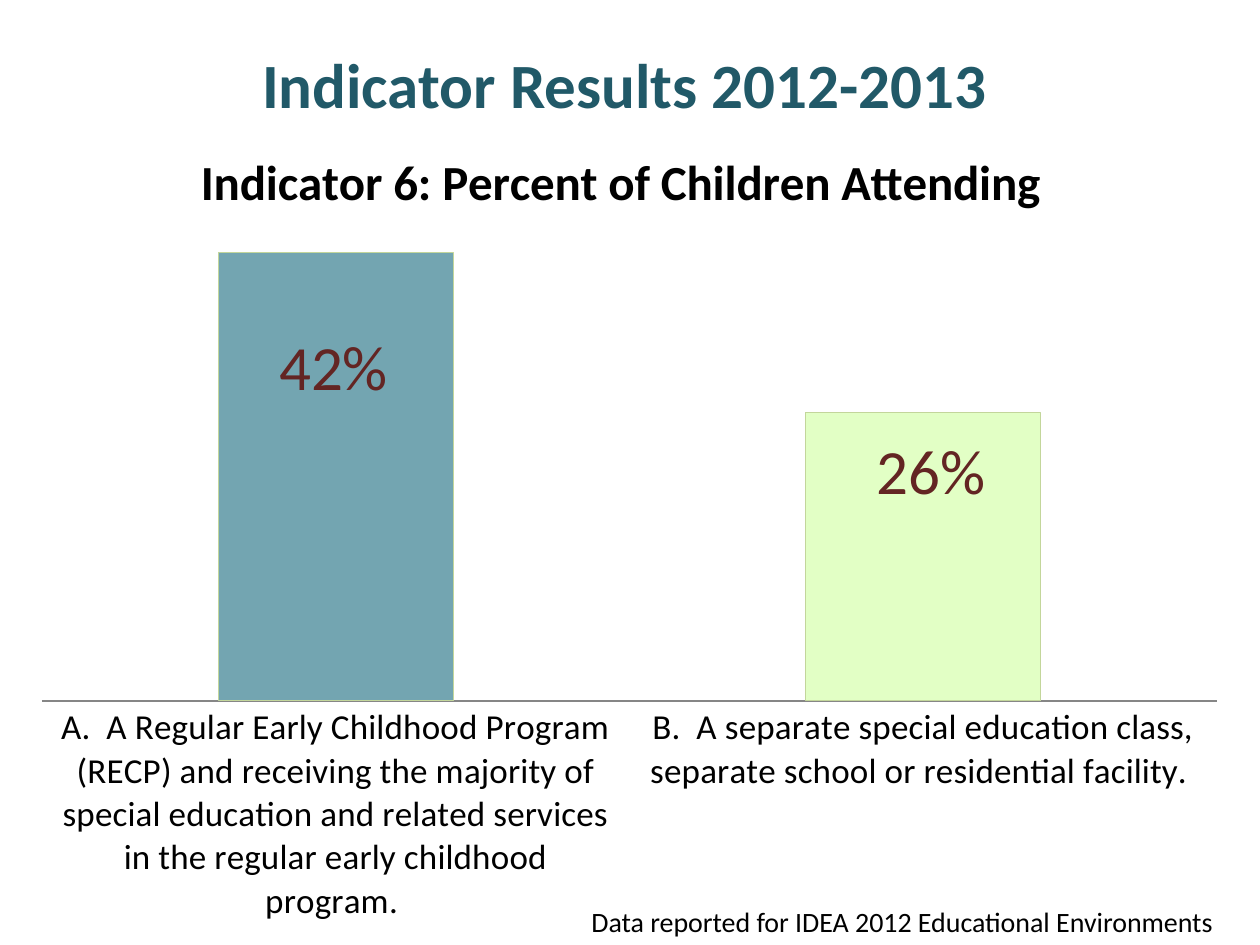
from dataclasses import dataclass

from lxml.etree import SubElement
from pptx import Presentation
from pptx.chart.data import CategoryChartData
from pptx.dml.color import RGBColor
from pptx.enum.chart import XL_CHART_TYPE as ChartType, XL_LABEL_POSITION as LabelPos
from pptx.enum.chart import XL_TICK_LABEL_POSITION as TickLabels, XL_TICK_MARK as Tick
from pptx.enum.text import MSO_ANCHOR as Anchor, PP_ALIGN as Align
from pptx.oxml.ns import qn
from pptx.util import Emu, Pt

EMU_PER_PX = 914400 // 126
FONT = "Calibri"
COLORS = {
    "title": "215968", "text": "000000", "label": "632523", "axis": "868686",
    "teal": "73A5B1", "lime": "E2FFC5", "outline": "C3D69B",
}


@dataclass(frozen=True)
class Box:
    left: int
    top: int
    width: int
    height: int

    def emu(self) -> tuple:
        return tuple(px(v) for v in (self.left, self.top, self.width, self.height))


@dataclass(frozen=True)
class Bar:
    category: str
    value: float
    label: str
    color: str
    label_dx: int
    label_dy: int


BARS = [
    Bar("A.  A Regular Early Childhood Program (RECP) and receiving the majority of special "
        "education and related services in the regular early childhood program. ",
        0.42, "42%", "teal", -2, 72),
    Bar("B.  A separate special education class, separate school or residential facility. ",
        0.27, "26%", "lime", 8, 16),
]
CHART = Box(-5, 126, 1250, 813)
PLOT = Box(47, 95, 1175, 480)  # within the chart
TITLE = Box(246, 39, 757, 89)
SOURCE = Box(579, 898, 680, 47)


def px(n: int) -> Emu:
    return Emu(n * EMU_PER_PX)


def rgb(name: str) -> RGBColor:
    return RGBColor.from_string(COLORS[name])


def set_font(font, size: int, color: str = "text", bold: bool = False) -> None:
    for key, value in {"name": FONT, "size": Pt(size), "bold": bold}.items():
        setattr(font, key, value)
    font.color.rgb = rgb(color)


def write(tf, text: str, size: int, color: str = "text", bold: bool = False,
          align: Align = Align.LEFT) -> None:
    p = tf.paragraphs[0]
    p.alignment = align
    r = p.add_run()
    r.text = text
    set_font(r.font, size, color, bold)


def set_layout(parent, index: int, modes: dict, **lengths: int) -> None:
    """Give a chart part a manual layout, from px within the chart."""
    for old in parent.findall(qn("c:layout")):
        parent.remove(old)
    layout = SubElement(parent, qn("c:layout"))
    parent.insert(index, layout)
    manual = SubElement(layout, qn("c:manualLayout"))
    fractions = {key: n / (CHART.width if key in "xw" else CHART.height)
                 for key, n in lengths.items()}
    for tag, value in {**modes, **fractions}.items():
        SubElement(manual, qn(f"c:{tag}")).set("val", str(value))


def add_bar_chart(slide, bars: list[Bar]) -> None:
    data = CategoryChartData(number_format="0%")
    data.categories = [bar.category for bar in bars]
    data.add_series("Series 1", [bar.value for bar in bars])
    chart = slide.shapes.add_chart(ChartType.COLUMN_CLUSTERED, *CHART.emu(), data).chart
    set_font(chart.font, 10)
    chart.has_legend = False

    write(chart.chart_title.text_frame, "Indicator 6: Percent of Children Attending", 28, bold=True)
    chart.chart_title.include_in_layout = False
    edges = {"xMode": "edge", "yMode": "edge"}
    set_layout(chart.chart_title._element, 1, edges, x=197, y=14)
    plot = chart.plots[0]
    set_layout(plot._element.getparent(), 0, {"layoutTarget": "inner", **edges},
               x=PLOT.left, y=PLOT.top, w=PLOT.width, h=PLOT.height)

    axis = chart.category_axis
    axis.major_tick_mark = axis.minor_tick_mark = Tick.NONE
    axis.tick_label_position = TickLabels.NEXT_TO_AXIS
    set_font(axis.tick_labels.font, 20)
    axis.format.line.color.rgb = rgb("axis")
    for key, value in {"visible": False, "has_major_gridlines": False,
                       "minimum_scale": 0, "maximum_scale": 0.45}.items():
        setattr(chart.value_axis, key, value)

    plot.gap_width = 150
    plot.vary_by_categories = False
    series = plot.series[0]
    labels = series.data_labels
    for key, value in {"show_value": True, "number_format": "0%",
                       "number_format_is_linked": False}.items():
        setattr(labels, key, value)
    set_font(labels.font, 36, "label", True)
    for i, bar in enumerate(bars):
        style_bar(series.points[i], bar)
    for leader in labels._element.iter(qn("c:showLeaderLines")):
        leader.set("val", "0")
    hide_leader_lines(labels._element)


def hide_leader_lines(d_lbls) -> None:
    """Bar charts keep this switch in the 2012 chart extension."""
    c15 = "http://schemas.microsoft.com/office/drawing/2012/chart"
    ext = SubElement(SubElement(d_lbls, qn("c:extLst")), qn("c:ext"), nsmap={"c15": c15})
    ext.set("uri", "{CE6537A1-D6FC-4f65-9D91-7224C49458BB}")
    SubElement(ext, f"{{{c15}}}showLeaderLines").set("val", "0")


def style_bar(point, bar: Bar) -> None:
    point.format.fill.solid()
    point.format.fill.fore_color.rgb = rgb(bar.color)
    point.format.line.color.rgb = rgb("outline")
    point.format.line.width = Pt(0.5)
    label = point.data_label
    write(label.text_frame, bar.label, 36, "label")
    label.position = LabelPos.INSIDE_END
    d_lbl = next(label.text_frame._txBody.iterancestors(qn("c:dLbl")))
    set_layout(d_lbl, 1, {}, x=bar.label_dx, y=bar.label_dy)


def main() -> None:
    prs = Presentation()
    prs.slide_width, prs.slide_height = px(1260), px(945)
    slide = prs.slides.add_slide(prs.slide_layouts[5])

    add_bar_chart(slide, BARS)

    title = slide.shapes.title
    title.left, title.top, title.width, title.height = TITLE.emu()
    title.text_frame.word_wrap = False
    title.text_frame.vertical_anchor = Anchor.TOP
    write(title.text_frame, "Indicator Results 2012-2013", 36, "title", True, Align.CENTER)

    source = slide.shapes.add_textbox(*SOURCE.emu())
    source.text_frame.word_wrap = True
    write(source.text_frame, "Data reported for IDEA 2012 Educational Environments", 16)

    prs.save("out.pptx")


if __name__ == "__main__":
    main()
